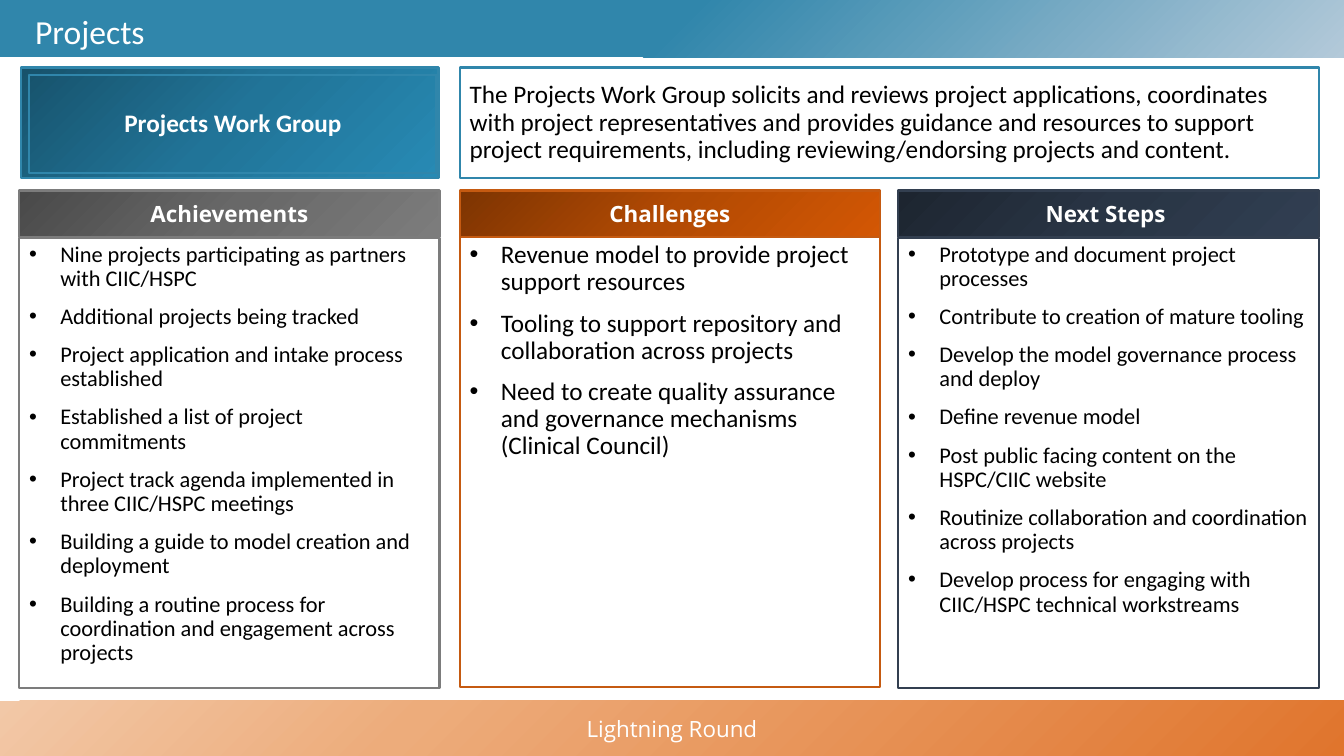
from lxml.etree import SubElement
from pptx import Presentation
from pptx.dml.color import RGBColor
from pptx.enum.shapes import MSO_SHAPE
from pptx.enum.text import MSO_ANCHOR, PP_ALIGN
from pptx.oxml.ns import qn
from pptx.util import Emu, Pt

PX = 9144  # 100 px to the inch
COLORS = {
    "white": "FFFFFF", "black": "000000",
    "blue": "3086AB", "gray": "7C7C7C", "orange": "C55A11", "navy": "333F50",
}
GRADIENTS = {
    "footer": [(0, "E0752D"), (69, "EDAC7B"), (100, "F2C8A7")],
    "header": [(0, "B3C9D9"), (50, "3086AB"), (98, "3086AB")],
    "blue": [(0, "17526B"), (50, "217498"), (100, "278AB4")],
    "gray": [(0, "494949"), (50, "686868"), (100, "7C7C7C")],
    "orange": [(0, "7D3402"), (50, "B24A03"), (100, "D35704")],
    "navy": [(0, "1D2530"), (50, "293545"), (100, "313F52")],
}
FORMATS = {
    "title": {"name": "Calibri", "size": Pt(24), "color": "white"},
    "footer": {"name": "Open Sans", "size": Pt(16), "color": "white"},
    "heading": {"name": "Open Sans", "size": Pt(16), "bold": True, "color": "white"},
    "group": {"name": "Calibri", "size": Pt(18), "bold": True, "color": "white"},
    "large": {"name": "Calibri", "size": Pt(18), "color": "black"},
    "small": {"name": "Calibri", "size": Pt(16), "color": "black"},
}
TITLE = "Projects"
GROUP = "Projects Work Group"
FOOTER = "Lightning Round"
MISSION = (
    "The Projects Work Group solicits and reviews project applications, "
    "coordinates with project representatives and provides guidance and "
    "resources to support project requirements, including "
    "reviewing/endorsing projects and content."
)
# heading, color, text format, left, body top, bullets
COLUMNS = [
    ("Achievements", "gray", "small", 19, 236, [
        "Nine projects participating as partners with CIIC/HSPC",
        "Additional projects being tracked",
        "Project application and intake process established",
        "Established a list of project commitments",
        "Project track agenda implemented in three CIIC/HSPC meetings",
        "Building a guide to model creation and deployment",
        "Building a routine process for coordination and engagement across projects",
    ]),
    ("Challenges", "orange", "large", 456, 235, [
        "Revenue model to provide project support resources",
        "Tooling to support repository and collaboration across projects",
        "Need to create quality assurance and governance mechanisms (Clinical Council)",
    ]),
    ("Next Steps ", "navy", "small", 891, 236, [
        "Prototype and document project processes",
        "Contribute to creation of mature tooling",
        "Develop the model governance process and deploy",
        "Define revenue model",
        "Post public facing content on the HSPC/CIIC website",
        "Routinize collaboration and coordination across projects",
        "Develop process for engaging with CIIC/HSPC technical workstreams",
    ]),
]
PAGE_WIDTH, PAGE_HEIGHT = 1333, 750
COLUMN_WIDTH, HEADING_TOP, HEADING_HEIGHT, BODY_HEIGHT = 417, 189, 46, 447
BULLET_INDENT = 31


def fill_gradient(box, stops, from_corner):
    """Fill with several stops, from the lower right corner or along 45 degrees."""
    box.fill.gradient()
    gradient = box.fill._fill._gradFill
    for child in list(gradient):
        gradient.remove(child)
    stop_list = SubElement(gradient, qn("a:gsLst"))
    for position, color in stops:
        stop = SubElement(stop_list, qn("a:gs"), pos=str(position * 1000))
        SubElement(stop, qn("a:srgbClr"), val=color)
    if from_corner:
        circle = SubElement(gradient, qn("a:path"), path="circle")
        SubElement(circle, qn("a:fillToRect"), l="100000", t="100000")
        SubElement(gradient, qn("a:tileRect"), r="-100000", b="-100000")
    else:
        SubElement(gradient, qn("a:lin"), ang="2700000", scaled="1")


def add_box(page, place, line=None, gradient=None, from_corner=False):
    box = page.shapes.add_shape(MSO_SHAPE.RECTANGLE, *(Emu(n * PX) for n in place))
    box.shadow.inherit = False
    if gradient:
        fill_gradient(box, GRADIENTS[gradient], from_corner)
    else:
        box.fill.background()
    if line:
        box.line.color.rgb = RGBColor.from_string(COLORS[line])
        box.line.width = Pt(1.5)
    else:
        box.line.fill.background()
    return box


def write(box, texts, style, align=PP_ALIGN.LEFT, anchor=MSO_ANCHOR.MIDDLE,
          spacing=0.9, bullets=False, indent=0):
    frame = box.text_frame
    frame.word_wrap = True
    frame.vertical_anchor = anchor
    for index, text in enumerate(texts):
        para = frame.paragraphs[0] if index == 0 else frame.add_paragraph()
        para.alignment = align
        para.line_spacing = spacing
        if index:
            para.space_before = Pt(10)
        properties = para._p.get_or_add_pPr()
        properties.set("marL", str(indent * PX))
        if bullets:
            properties.set("indent", str(-indent * PX))
            SubElement(properties, qn("a:buFont"), typeface="Arial")
            SubElement(properties, qn("a:buChar"), char="•")
        span = para.add_run()
        span.text = text
        for key, value in FORMATS[style].items():
            if key == "color":
                span.font.color.rgb = RGBColor.from_string(COLORS[value])
            else:
                setattr(span.font, key, value)


def main():
    deck = Presentation()
    deck.slide_width, deck.slide_height = Emu(PAGE_WIDTH * PX), Emu(PAGE_HEIGHT * PX)
    page = deck.slides.add_slide(deck.slide_layouts[6])
    center = PP_ALIGN.CENTER

    footer = add_box(page, (0, 695, PAGE_WIDTH, 55), None, "footer", True)
    write(footer, [FOOTER], "footer", center, spacing=1.0)
    add_box(page, (0, 0, PAGE_WIDTH, 57), None, "header", True)
    title = page.shapes.add_textbox(0, 0, Emu(PAGE_WIDTH * PX), Emu(66 * PX))
    write(title, [TITLE], "title", indent=25)

    add_box(page, (21, 67, 414, 110), "blue", "blue")
    write(add_box(page, (29, 74, 404, 98), "blue"), [GROUP], "group", center)
    write(add_box(page, (456, 67, 852, 110), "blue"), [MISSION], "large")

    for heading, color, style, left, top, items in COLUMNS:
        head = add_box(page, (left, HEADING_TOP, COLUMN_WIDTH, HEADING_HEIGHT), color, color)
        write(head, [heading], "heading", center, spacing=1.0)
        body = add_box(page, (left, top, COLUMN_WIDTH, BODY_HEIGHT), color)
        write(body, items, style, anchor=MSO_ANCHOR.TOP, bullets=True, indent=BULLET_INDENT)

    deck.save("out.pptx")


if __name__ == "__main__":
    main()
